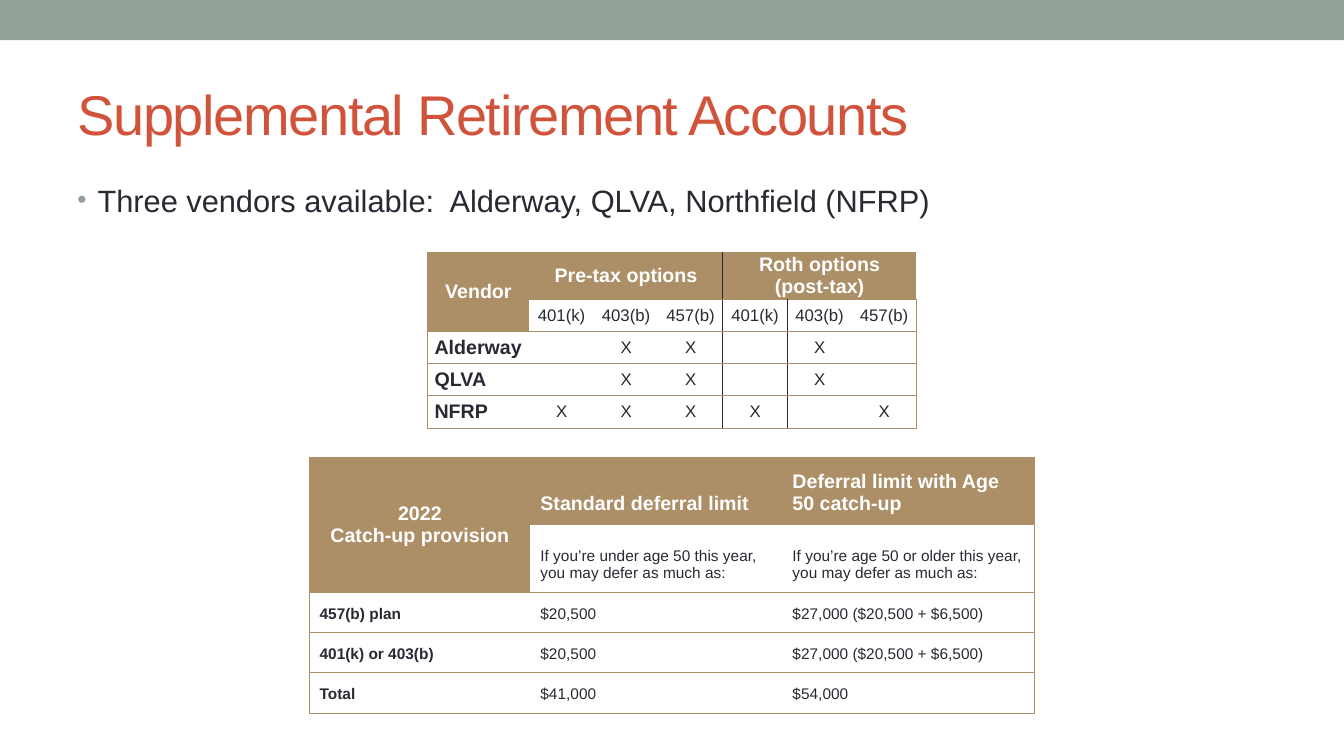
"""Build a slide about supplemental retirement accounts with two tables."""
import pptx
import pptx.dml.color
import pptx.enum.shapes
import pptx.enum.text
import pptx.oxml.ns
import pptx.util
from lxml import etree

PX = 9144
FONT = "Arial"
SAGE, RED, INK, GOLD, WHITE = "93A299", "D2533C", "292934", "AD8F67", "FFFFFF"
ALIGN = pptx.enum.text.PP_ALIGN
ANCHOR = pptx.enum.text.MSO_ANCHOR

VENDOR_ROWS = [
    ["Vendor", "Pre-tax options", "", "", "Roth options (post-tax)", "", ""],
    [""] + ["401(k)", "403(b)", "457(b)"] * 2,
    ["Alderway", "", "X", "X", "", "X", ""],
    ["QLVA", "", "X", "X", "", "X", ""],
    ["NFRP", "X", "X", "X", "X", "", "X"],
]
LIMIT_ROWS = [
    ["2022\nCatch-up provision", "Standard deferral limit", "Deferral limit with Age 50 catch-up"],
    ["", "If you’re under age 50 this year, you may defer as much as:",
     "If you’re age 50 or older this year, you may defer as much as:"],
    ["457(b) plan", "$20,500", "$27,000 ($20,500 + $6,500)"],
    ["401(k) or 403(b)", "$20,500", "$27,000 ($20,500 + $6,500)"],
    ["Total", "$41,000", "$54,000"],
]


def px(length):
    """Turn a length in px into EMU."""
    return pptx.util.Emu(length * PX)


def color(value):
    """Turn a hex string into a colour."""
    return pptx.dml.color.RGBColor.from_string(value)


def format_text(text_frame, size, fill, bold=False, align=ALIGN.LEFT):
    """Format every paragraph and run of a text frame."""
    for paragraph in text_frame.paragraphs:
        paragraph.alignment = align
        for run in paragraph.runs:
            run.font.name = FONT
            run.font.size = pptx.util.Pt(size)
            run.font.bold = bold
            run.font.color.rgb = color(fill)


def add_band(slide, left, top, width, height, fill):
    """Add a plain filled rectangle."""
    shape = slide.shapes.add_shape(
        pptx.enum.shapes.MSO_SHAPE.RECTANGLE, px(left), px(top), px(width), px(height))
    shape.shadow.inherit = False
    shape.fill.solid()
    shape.fill.fore_color.rgb = color(fill)
    shape.line.fill.background()


def add_text(slide, left, top, width, height, text, size, fill, anchor):
    """Add a wrapped text box and return its only paragraph."""
    shape = slide.shapes.add_textbox(px(left), px(top), px(width), px(height))
    text_frame = shape.text_frame
    text_frame.word_wrap = True
    text_frame.vertical_anchor = anchor
    text_frame.text = text
    format_text(text_frame, size, fill)
    return text_frame.paragraphs[0]


def add_child(parent, tag, **attributes):
    """Append a DrawingML element to a parent element."""
    return etree.SubElement(parent, pptx.oxml.ns.qn(tag), **attributes)


def add_bullet(paragraph, fill, indent):
    """Give a paragraph a coloured round bullet and a hanging indent."""
    properties = paragraph._p.get_or_add_pPr()
    properties.set("marL", str(px(indent)))
    properties.set("indent", str(-px(indent)))
    add_child(add_child(properties, "a:buClr"), "a:srgbClr", val=fill)
    add_child(properties, "a:buSzPct", val="85000")
    add_child(properties, "a:buFont", typeface=FONT)
    add_child(properties, "a:buChar", char="•")


def set_borders(cell, left, right):
    """Draw gold lines above and below a cell and the given lines at its sides."""
    properties = cell._tc.get_or_add_tcPr()
    for side, fill in (("L", left), ("R", right), ("T", GOLD), ("B", GOLD)):
        width = pptx.util.Pt(1 if fill == INK else 0.75)
        line = add_child(properties, f"a:ln{side}", w=str(width))
        if fill:
            add_child(add_child(line, "a:solidFill"), "a:srgbClr", val=fill)
        else:
            add_child(line, "a:noFill")


def add_grid(slide, left, top, columns, rows, texts, spans, dividers):
    """Add a table with merged headers; dividers map a column to its first row."""
    table = slide.shapes.add_table(
        len(rows), len(columns), px(left), px(top), px(sum(columns)), px(sum(rows))).table
    for column, width in zip(table.columns, columns):
        column.width = px(width)
    for row, height in zip(table.rows, rows):
        row.height = px(height)
    for first, last in spans:
        table.cell(*first).merge(table.cell(*last))
    edges = {0: 0, len(columns): 0, **dividers}

    def edge_color(row, edge):
        """Return the colour of a vertical edge in a row, or None."""
        if row < edges.get(edge, len(rows)):
            return None
        return INK if edge in dividers else GOLD

    for row, values in enumerate(texts):
        for column, text in enumerate(values):
            cell = table.cell(row, column)
            set_borders(cell, edge_color(row, column), edge_color(row, column + 1))
            is_header = row == 0 or (row == 1 and column == 0)
            cell.fill.solid()
            cell.fill.fore_color.rgb = color(GOLD if is_header else WHITE)
            if text:
                cell.text_frame.text = text
    return table


def format_cells(table, margins, label_size, body_size, align, anchor):
    """Set the margins, anchors and text formats of a table's cells."""
    for row_index, row in enumerate(table.rows):
        for column_index, cell in enumerate(row.cells):
            is_header = row_index == 0
            is_label = column_index == 0
            is_corner = is_header and is_label
            cell.margin_left = cell.margin_right = px(margins[0])
            cell.margin_top = cell.margin_bottom = px(margins[1])
            cell.vertical_anchor = ANCHOR.MIDDLE if is_corner else anchor
            size = 14 if is_header else label_size if is_label else body_size
            cell_align = ALIGN.CENTER if is_corner else ALIGN.LEFT if is_label else align
            format_text(cell.text_frame, size, WHITE if is_header else INK,
                        is_header or is_label, cell_align)


def main():
    """Build and save the slide."""
    presentation = pptx.Presentation()
    presentation.slide_width, presentation.slide_height = px(1333), px(750)
    slide = presentation.slides.add_slide(presentation.slide_layouts[6])
    add_band(slide, 0, 0, 1333, 40, SAGE)
    title = add_text(slide, 67, 58, 1200, 108, "Supplemental Retirement Accounts",
                     40, RED, ANCHOR.MIDDLE)
    title.runs[0].font._element.set("spc", "-100")
    vendors = add_text(slide, 67, 175, 1200, 60,
                       "Three vendors available:  Alderway, QLVA, Northfield (NFRP)",
                       22, INK, ANCHOR.TOP)
    vendors.space_before = pptx.util.Pt(4.4)
    add_bullet(vendors, SAGE, 20)

    vendor_table = add_grid(
        slide, 424, 250, [101] + [64] * 6, [44] + [32] * 4, VENDOR_ROWS,
        [((0, 0), (1, 0)), ((0, 1), (0, 3)), ((0, 4), (0, 6))], {4: 0, 5: 1})
    format_cells(vendor_table, (7, 0), 14, 12, ALIGN.CENTER, ANCHOR.MIDDLE)
    limit_table = add_grid(
        slide, 307, 454, [219, 250, 250], [66, 64, 40, 40, 40], LIMIT_ROWS,
        [((0, 0), (1, 0))], {})
    format_cells(limit_table, (10, 10), 11, 11, ALIGN.LEFT, ANCHOR.BOTTOM)
    presentation.save("out.pptx")


if __name__ == "__main__":
    main()
